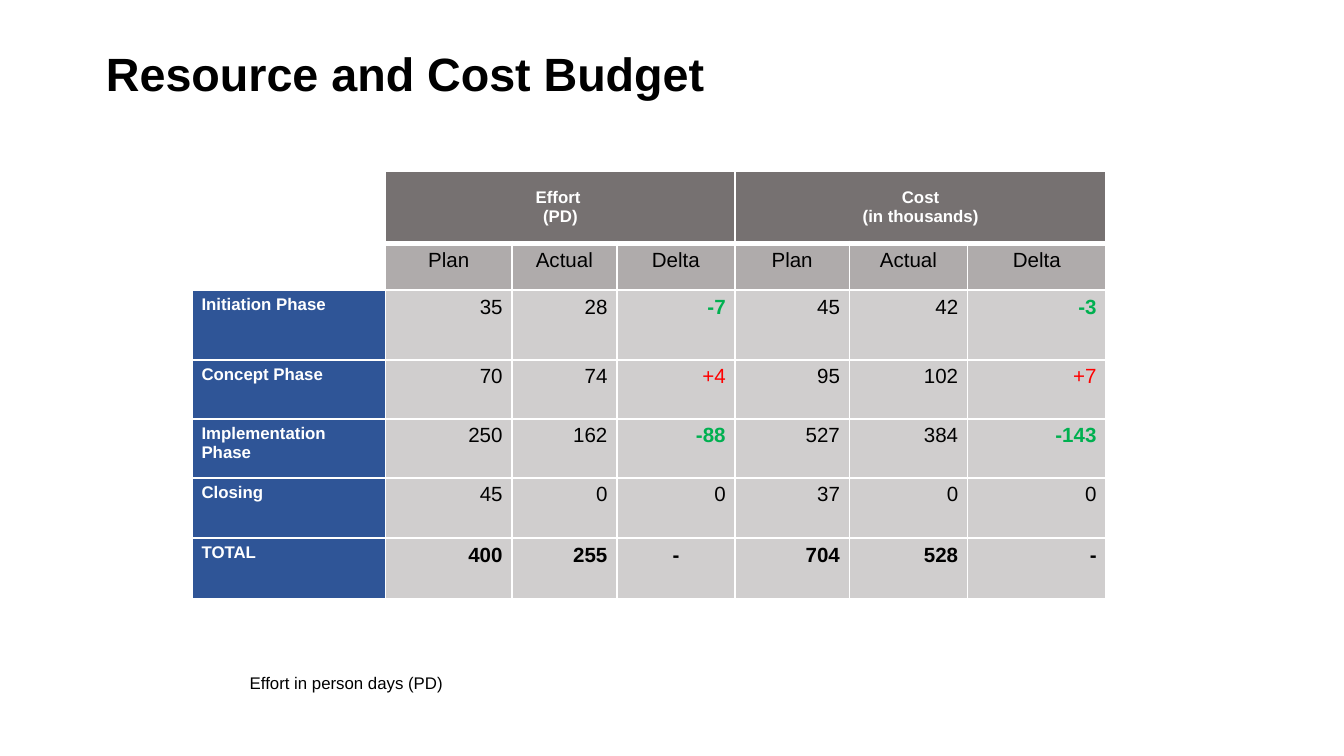
from lxml import etree
from pptx import Presentation
from pptx import util as u
from pptx.dml.color import RGBColor
from pptx.enum import text
from pptx.oxml import ns

WIDE = u.Inches(10)
HIGH = WIDE * 9 // 16
WHITE, BLACK, GREEN, RED = "FFFFFF", "000000", "00B050", "FF0000"
DARK, MID, PALE, BLUE = "767171", "AFABAB", "D0CECE", "2F5597"
LEFT, MIDDLE, RIGHT = text.PP_ALIGN.LEFT, text.PP_ALIGN.CENTER, text.PP_ALIGN.RIGHT
COLS = [1.44, 0.94, 0.78, 0.88, 0.85, 0.88, 1.03]
ROWS = [0.54, 0.35, 0.52, 0.44, 0.44, 0.45, 0.45]
HEADS = ["Plan", "Actual", "Delta"]
DATA = [
    ["", "Effort \v(PD)", "", "", "Cost\v(in thousands)", "", ""],
    [""] + HEADS * 2,
    ["Initiation Phase", "35", "28", "-7", "45", "42", "-3"],
    ["Concept Phase", "70", "74", "+4", "95", "102", "+7"],
    ["Implementation Phase", "250", "162", "-88", "527", "384", "-143"],
    ["Closing", "45", "0", "0", "37", "0", "0"],
    ["TOTAL", "400", "255", "-", "704", "528", "-"],
]
LAST = len(DATA) - 1


def color(code):
    """Turn a hex string into a colour."""
    return RGBColor.from_string(code)


def area(x, y, w, h):
    """Turn percentages of the slide into a box."""
    return [int(part * side / 100) for part, side in zip((x, y, w, h), (WIDE, HIGH) * 2)]


def write(para, words, size, ink, bold=False, align=LEFT):
    """Put styled words into a paragraph, sizing its breaks and end as well."""
    para.text = words
    para.alignment = align
    for run in para.runs:
        run.font.name, run.font.size, run.font.bold = "Arial", u.Pt(size), bold
        run.font.color.rgb = color(ink)
    points = str(size * 100)
    for gap in para._p.findall(ns.qn("a:br")):
        etree.SubElement(gap, ns.qn("a:rPr"), sz=points)
    etree.SubElement(para._p, ns.qn("a:endParaRPr"), sz=points)


def label(slide, box, words, size, bold=False, anchor=text.MSO_ANCHOR.TOP):
    """Add a wrapped text box and return its paragraph."""
    frame = slide.shapes.add_textbox(*box).text_frame
    frame.word_wrap = True
    frame.vertical_anchor = anchor
    para = frame.paragraphs[0]
    write(para, words, size, BLACK, bold)
    return para


def edge(cell, row):
    """Draw white borders, thick below the top row."""
    props = cell._tc.get_or_add_tcPr()
    thick = {"T": row == 1, "B": row == 0}
    for spot, side in enumerate("LRTB"):
        line = etree.Element(ns.qn("a:ln" + side), w=str(u.Pt(3 if thick.get(side) else 1)))
        fill = etree.SubElement(line, ns.qn("a:solidFill"))
        etree.SubElement(fill, ns.qn("a:srgbClr"), val=WHITE)
        props.insert(spot, line)


def look(row, col, words):
    """Give fill, size, ink, weight and alignment of a cell."""
    if col == 0:
        return (BLUE if row > 1 else None), 9, WHITE, True, LEFT
    if row == 0:
        return DARK, 9, WHITE, True, MIDDLE
    if row == 1:
        return MID, 11, BLACK, False, MIDDLE
    if row == LAST:
        return PALE, 11, BLACK, True, MIDDLE if col == 3 else RIGHT
    ink = {"-": GREEN, "+": RED}.get(words[0], BLACK)
    return PALE, 11, ink, ink == GREEN, RIGHT


def budget(slide, box):
    """Build the budget table inside a box."""
    grid = slide.shapes.add_table(len(ROWS), len(COLS), *box).table
    grid.first_row = grid.horz_banding = False
    for part, share in zip(grid.columns, COLS):
        part.width = int(box[2] * share / sum(COLS))
    for part, share in zip(grid.rows, ROWS):
        part.height = int(box[3] * share / sum(ROWS))
    for first in (1, 4):
        grid.cell(0, first).merge(grid.cell(0, first + 2))
    for row, line in enumerate(DATA):
        for col, words in enumerate(line):
            cell = grid.cell(row, col)
            fill, *style = look(row, col, words)
            cell.margin_left = cell.margin_right = u.Inches(0.07)
            cell.margin_top = cell.margin_bottom = u.Inches(0.04)
            if row == 0:
                cell.vertical_anchor = text.MSO_ANCHOR.MIDDLE
            if fill:
                cell.fill.solid()
                cell.fill.fore_color.rgb = color(fill)
            else:
                cell.fill.background()
            edge(cell, row)
            write(cell.text_frame.paragraphs[0], words, *style)


def main():
    """Build and save the slide."""
    deck = Presentation()
    deck.slide_width, deck.slide_height = WIDE, HIGH
    slide = deck.slides.add_slide(deck.slide_layouts[6])
    title = label(slide, area(6.9, 5.4, 86.2, 9.4), "Resource and Cost Budget", 25,
                  True, text.MSO_ANCHOR.MIDDLE)
    title.line_spacing = 0.9
    budget(slide, area(14.3, 22.6, 68, 56.6))
    label(slide, area(17.6, 88.1, 32.4, 4.4), "Effort in person days (PD)", 9)
    deck.save("out.pptx")


if __name__ == "__main__":
    main()
